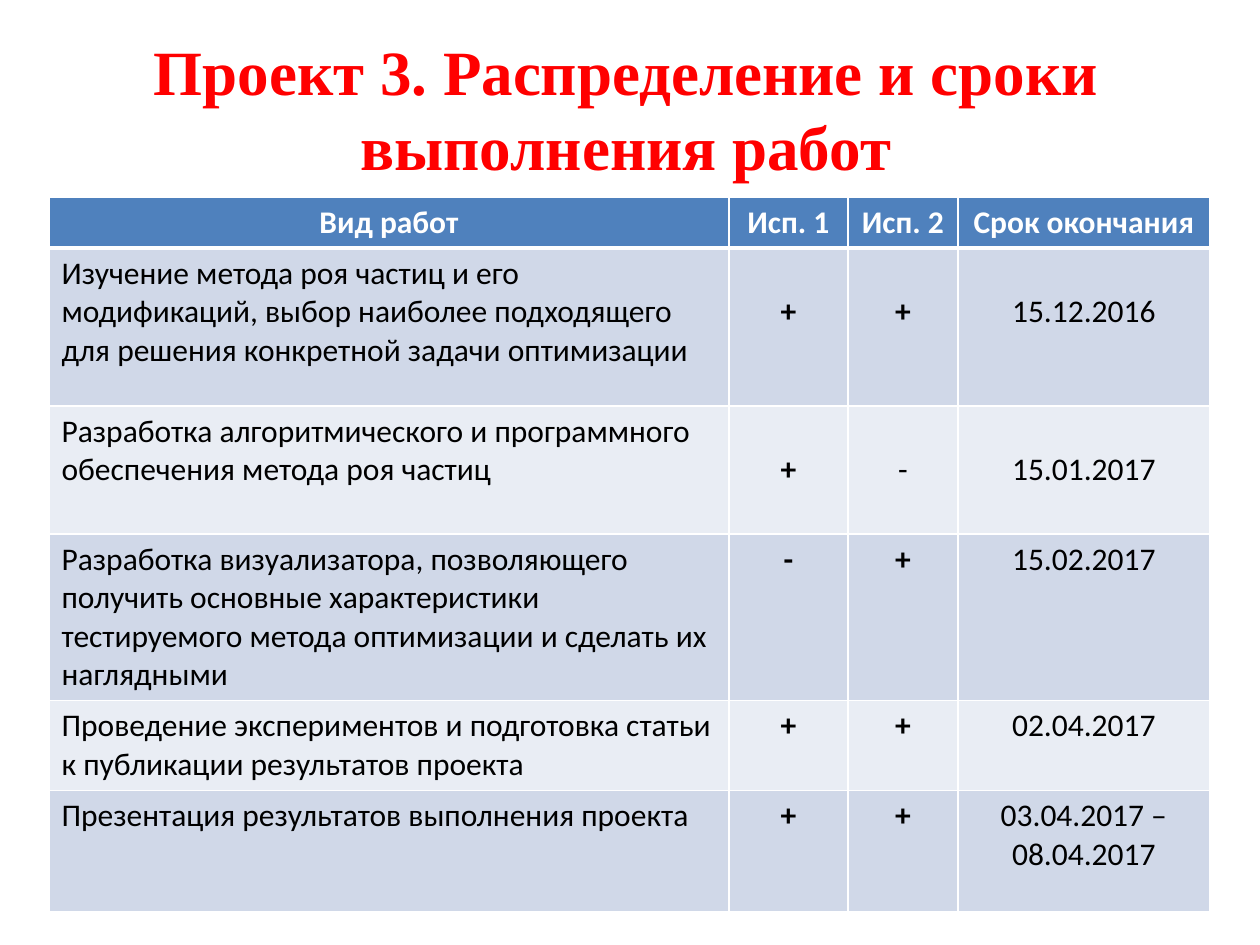
from dataclasses import dataclass

from lxml import etree
from pptx import Presentation
from pptx import util as u
from pptx.dml.color import RGBColor
from pptx.enum import text
from pptx.oxml.ns import qn

PX = 914400 / 126


@dataclass(frozen=True)
class Theme:
    serif: str = "Times New Roman"
    sans: str = "Calibri"
    big: int = 36
    body: int = 18
    red: str = "FF0000"
    white: str = "FFFFFF"
    black: str = "000000"
    head: str = "4F81BD"
    bands: tuple = ("D0D8E8", "E9EDF4")
    thin: int = 1
    thick: int = 3


T = Theme()
COLS = (680, 119, 110, 252)
HEAD = ("Вид работ", "Исп. 1", "Исп. 2", "Срок окончания")
# Row height, offset of the marks and date from the row top, cell texts
TASKS = (
    (158, 38, ("Изучение метода роя частиц и его модификаций, выбор наиболее "
               "подходящего для решения конкретной задачи оптимизации",
               "+", "+", "15.12.2016")),
    (128, 38, ("Разработка алгоритмического и программного обеспечения метода "
               "роя частиц", "+", "-", "15.01.2017")),
    (166, 0, ("Разработка визуализатора, позволяющего получить основные "
              "характеристики тестируемого метода оптимизации и сделать их "
              "наглядными", "-", "+", "15.02.2017")),
    (90, 0, ("Проведение экспериментов и подготовка статьи к публикации "
             "результатов проекта", "+", "+", "02.04.2017")),
    (121, 0, ("Презентация результатов выполнения проекта",
              "+", "+", "03.04.2017 – 08.04.2017")),
)


def px(n):
    return u.Emu(round(n * PX))


def write(frame, words, face, size, color, bold, center):
    para = frame.paragraphs[0]
    para.alignment = text.PP_ALIGN.CENTER if center else text.PP_ALIGN.LEFT
    run = para.add_run()
    run.text = words
    font = run.font
    font.name, font.size, font.bold = face, u.Pt(size), bold
    font.color.rgb = RGBColor.from_string(color)


def edge(cell, side, width):
    props = cell._tc.get_or_add_tcPr()
    line = etree.SubElement(props, qn(f"a:ln{side}"), w=str(u.Pt(width)))
    fill = etree.SubElement(line, qn("a:solidFill"))
    etree.SubElement(fill, qn("a:srgbClr"), val=T.white)


def paint(cell, fill, top, bottom):
    """Set the four borders first: the schema wants them before the fill."""
    for side, width in zip("LRTB", (T.thin, T.thin, top, bottom)):
        edge(cell, side, width)
    cell.fill.solid()
    cell.fill.fore_color.rgb = RGBColor.from_string(fill)


def title(slide, x, y, w, h):
    shape = slide.shapes.title
    shape.left, shape.top, shape.width, shape.height = map(px, (x, y, w, h))
    frame = shape.text_frame
    frame.word_wrap = True
    frame.vertical_anchor = text.MSO_ANCHOR.MIDDLE
    write(frame, "Проект 3. Распределение и сроки выполнения работ",
          T.serif, T.big, T.red, True, True)


def plan(slide, x, y, w, h):
    rows = ((49, 0, HEAD),) + TASKS
    table = slide.shapes.add_table(
        len(rows), len(COLS), *map(px, (x, y, w, h))).table
    for col, width in zip(table.columns, COLS):
        col.width = px(width)
    for r, (high, drop, words) in enumerate(rows):
        table.rows[r].height = px(high)
        first = r == 0
        fill = T.head if first else T.bands[(r - 1) % 2]
        top = T.thick if r == 1 else T.thin
        bottom = T.thick if first else T.thin
        for c, word in enumerate(words):
            cell = table.cell(r, c)
            paint(cell, fill, top, bottom)
            if c and drop:
                cell.margin_top = px(drop + 6)
            bold = first or word == "+" or (word == "-" and c == 1)
            write(cell.text_frame, word, T.sans, T.body,
                  T.white if first else T.black, bold, first or c > 0)


def main():
    deck = Presentation()
    deck.slide_width, deck.slide_height = px(1260), px(945)
    slide = deck.slides.add_slide(deck.slide_layouts[5])
    title(slide, 59, 29, 1134, 158)
    plan(slide, 49, 197, sum(COLS), 712)
    deck.save("out.pptx")


if __name__ == "__main__":
    main()
